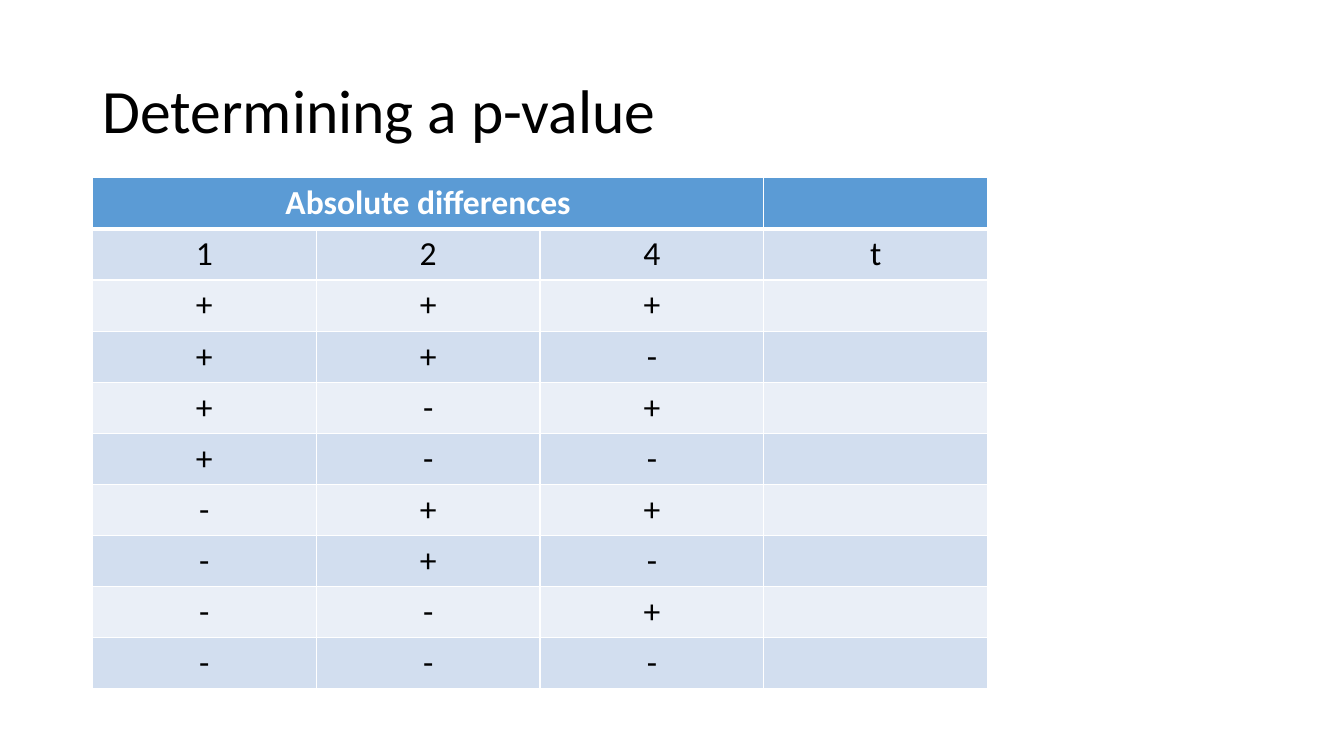
from itertools import product

from lxml import etree
from pptx import Presentation
from pptx import util as u
from pptx.dml import color
from pptx.enum import text
from pptx.oxml import ns

# Content
TITLE = "Determining a p-value"
HEADER = ["Absolute differences", "", "", ""]
LABELS = ["1", "2", "4", "t"]
SIGNS = [[*signs, ""] for signs in product("+-", repeat=3)]
ROWS = [HEADER, LABELS, *SIGNS]

# Style
FONT = "Calibri"
BLACK, WHITE, BLUE = "000000", "FFFFFF", "5B9BD5"
BANDS = ["EAEFF7", "D2DEEF"]
THIN, THICK = 1, 3

# Geometry
LEFT = u.Cm(2.33)
TABLE_TOP = u.Cm(4.48)
COLUMN_WIDTH, ROW_HEIGHT = u.Cm(5.64), u.Cm(1.27)


def rgb(value):
    return color.RGBColor.from_string(value)


def add_run(paragraph, words, size, colour, bold=False):
    run = paragraph.add_run()
    run.text = words
    run.font.name = FONT
    run.font.size = u.Pt(size)
    run.font.bold = bold
    run.font.color.rgb = rgb(colour)


def set_borders(cell, top, bottom):
    properties = cell._tc.get_or_add_tcPr()
    widths = {"L": THIN, "R": THIN, "T": top, "B": bottom}
    for side, width in widths.items():
        line = etree.SubElement(properties, ns.qn(f"a:ln{side}"), w=str(u.Pt(width)))
        fill = etree.SubElement(line, ns.qn("a:solidFill"))
        etree.SubElement(fill, ns.qn("a:srgbClr"), val=WHITE)


def add_title(slide):
    title = slide.shapes.title
    title.left, title.top = LEFT, u.Cm(1.01)
    title.width, title.height = u.Cm(29.21), u.Cm(3.68)
    frame = title.text_frame
    frame.word_wrap = True
    frame.vertical_anchor = text.MSO_ANCHOR.MIDDLE
    paragraph = frame.paragraphs[0]
    paragraph.alignment = text.PP_ALIGN.LEFT
    paragraph.line_spacing = 0.9
    add_run(paragraph, TITLE, 44, BLACK)


def add_sign_table(slide):
    row_count, column_count = len(ROWS), len(LABELS)
    table = slide.shapes.add_table(
        row_count, column_count, LEFT, TABLE_TOP,
        COLUMN_WIDTH * column_count, ROW_HEIGHT * row_count).table

    # Cells: header row, then alternating bands
    for row, values in enumerate(ROWS):
        is_header = row == 0
        for column, value in enumerate(values):
            cell = table.cell(row, column)
            set_borders(cell, THICK if row == 1 else THIN, THICK if is_header else THIN)
            cell.fill.solid()
            cell.fill.fore_color.rgb = rgb(BLUE if is_header else BANDS[row % 2])
            paragraph = cell.text_frame.paragraphs[0]
            paragraph.alignment = text.PP_ALIGN.CENTER
            if value:
                add_run(paragraph, value, 24, WHITE if is_header else BLACK, is_header)

    # The heading spans the three difference columns
    table.cell(0, 0).merge(table.cell(0, 2))


def main():
    presentation = Presentation()
    presentation.slide_width, presentation.slide_height = u.Cm(33.87), u.Cm(19.05)
    slide = presentation.slides.add_slide(presentation.slide_layouts.get_by_name("Title Only"))
    add_title(slide)
    add_sign_table(slide)
    presentation.save("out.pptx")


if __name__ == "__main__":
    main()
